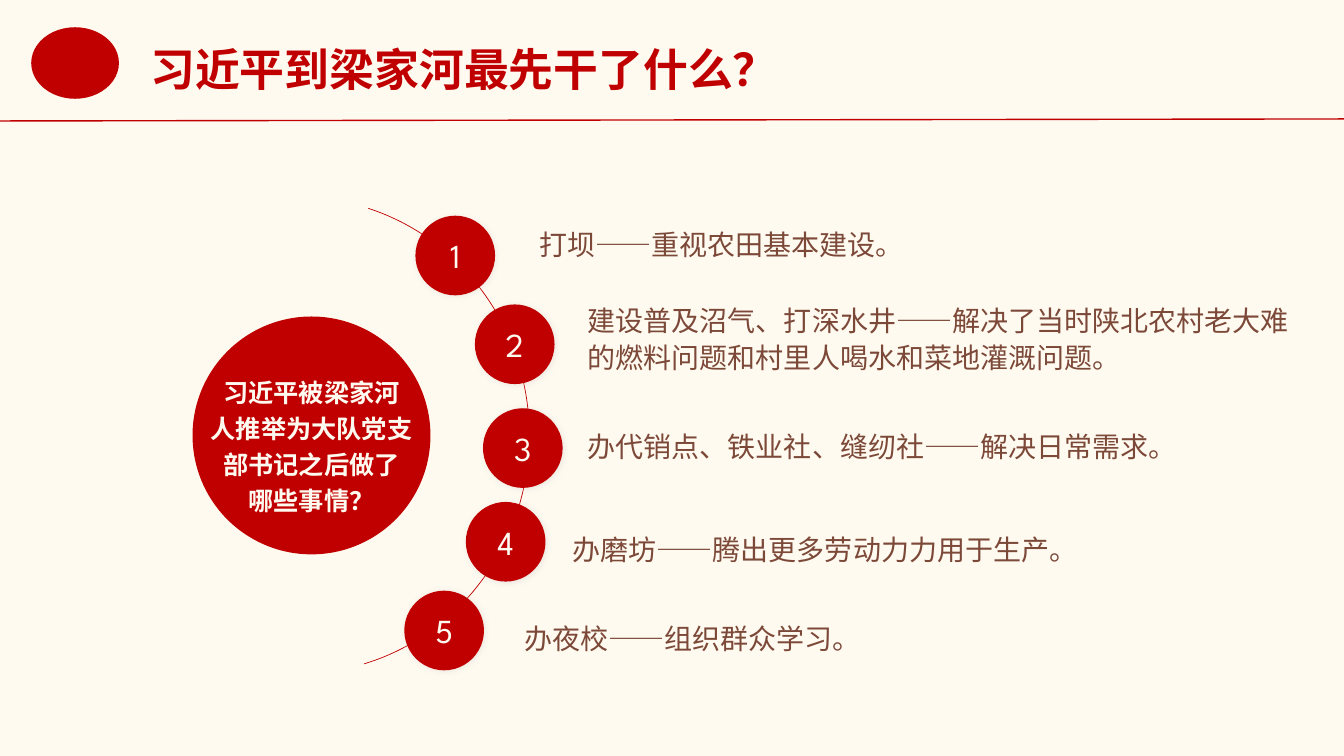
from dataclasses import dataclass

from lxml import etree
from pptx import Presentation
from pptx.dml.color import RGBColor
from pptx.enum import shapes, text
from pptx.oxml import ns
from pptx.util import Inches, Pt


@dataclass(frozen=True)
class Theme:
    red: RGBColor = RGBColor(0xC0, 0x00, 0x00)
    cream: RGBColor = RGBColor(0xFF, 0xFA, 0xF0)
    brown: RGBColor = RGBColor(0x7C, 0x49, 0x39)
    font: str = "Noto Sans CJK SC"
    number_font: str = "League Spartan"
    title_size: int = 32
    number_size: int = 24
    item_size: int = 20
    question_size: int = 18


theme = Theme()


def write(shape, lines, size, color, font=theme.font, bold=False,
          align=text.PP_ALIGN.LEFT, spacing=1.0, wrap=True,
          fit=text.MSO_AUTO_SIZE.SHAPE_TO_FIT_TEXT, anchor=text.MSO_ANCHOR.TOP):
    frame = shape.text_frame
    frame.word_wrap = wrap
    frame.auto_size = fit
    frame.vertical_anchor = anchor
    frame.text = "\n".join(lines)
    for para in frame.paragraphs:
        para.alignment = align
        para.line_spacing = spacing
        span = para.runs[0]
        span.font.name = font
        span.font.size = Pt(size)
        span.font.bold = bold
        span.font.color.rgb = color
        east_asian = etree.SubElement(span.font._element, ns.qn("a:ea"))
        east_asian.set("typeface", font)


def add_disc(page, left, top, width, height):
    disc = page.shapes.add_shape(shapes.MSO_SHAPE.OVAL, Inches(left), Inches(top),
                                 Inches(width), Inches(height))
    disc.fill.solid()
    disc.fill.fore_color.rgb = theme.red
    disc.line.fill.background()
    disc.shadow.inherit = False
    return disc


deck = Presentation()
deck.slide_width, deck.slide_height = Inches(13.33), Inches(7.5)
page = deck.slides.add_slide(deck.slide_layouts[5])
page.background.fill.solid()
page.background.fill.fore_color.rgb = theme.cream

# Header
add_disc(page, 0.31, 0.27, 0.87, 0.71)
rule = page.shapes.add_connector(shapes.MSO_CONNECTOR.STRAIGHT,
                                 0, Inches(1.2), Inches(13.33), Inches(1.18))
rule.line.color.rgb = theme.red
rule.line.width = Pt(1)
etree.SubElement(rule._element.spPr, ns.qn("a:effectLst"))

title = page.shapes.title
title.left, title.top = Inches(1.39), Inches(0.36)
title.width, title.height = Inches(6.42), Inches(0.64)
write(title, ["习近平到梁家河最先干了什么？"], theme.title_size, theme.red,
      bold=True, wrap=False)

# Central question
add_disc(page, 1.91, 3.14, 2.36, 2.36)
question = page.shapes.add_textbox(Inches(1.97), Inches(3.63), Inches(2.24), Inches(1.55))
write(question, ["习近平被梁家河", "人推举为大队党支部书记之后做了", "哪些事情？"],
      theme.question_size, theme.cream, bold=True,
      align=text.PP_ALIGN.CENTER, spacing=1.2)

arc = page.shapes.add_shape(shapes.MSO_SHAPE.ARC, Inches(0.7), Inches(1.96),
                            Inches(4.55), Inches(4.72))
arc.adjustments[0], arc.adjustments[1] = 172.047, 44.581
arc.fill.background()
arc.line.color.rgb = theme.red
arc.line.width = Pt(0.5)
arc.shadow.inherit = False

# Numbered answers: disc left, top; text left, top, width, height, line spacing
answers = [
    (4.12, 2.14, 5.25, 2.04, 5.5, 0.6, 1.5, "打坝——重视农田基本建设。"),
    (4.71, 3.02, 5.73, 2.93, 7.26, 0.84, 1.1,
     "建设普及沼气、打深水井——解决了当时陕北农村老大难的燃料问题和村里人喝水和菜地灌溉问题。"),
    (4.79, 4.05, 5.73, 4.05, 6.7, 0.6, 1.5, "办代销点、铁业社、缝纫社——解决日常需求。"),
    (4.62, 4.98, 5.58, 5.07, 5.5, 0.6, 1.5, "办磨坊——腾出更多劳动力力用于生产。"),
    (4.01, 5.86, 5.1, 5.95, 5.5, 0.6, 1.5, "办夜校——组织群众学习。"),
]
for number, (disc_left, disc_top, left, top, width, height, spacing, answer) in enumerate(answers, 1):
    disc = add_disc(page, disc_left, disc_top, 0.79, 0.79)
    effects = disc._element.spPr.find(ns.qn("a:effectLst"))
    shadow = etree.SubElement(effects, ns.qn("a:outerShdw"), blurRad=str(Pt(4)),
                              dist=str(Pt(1)), dir=str(45 * 60000), rotWithShape="0")
    tint = etree.SubElement(shadow, ns.qn("a:srgbClr"), val="CCCCCC")
    etree.SubElement(tint, ns.qn("a:alpha"), val="36000")
    frame = disc.text_frame
    frame.margin_left = frame.margin_right = frame.margin_top = frame.margin_bottom = 0
    write(disc, [str(number)], theme.number_size, theme.cream, font=theme.number_font,
          align=text.PP_ALIGN.CENTER, fit=text.MSO_AUTO_SIZE.NONE,
          anchor=text.MSO_ANCHOR.MIDDLE)
    box = page.shapes.add_textbox(Inches(left), Inches(top), Inches(width), Inches(height))
    write(box, [answer], theme.item_size, theme.brown, spacing=spacing)

deck.save("out.pptx")
